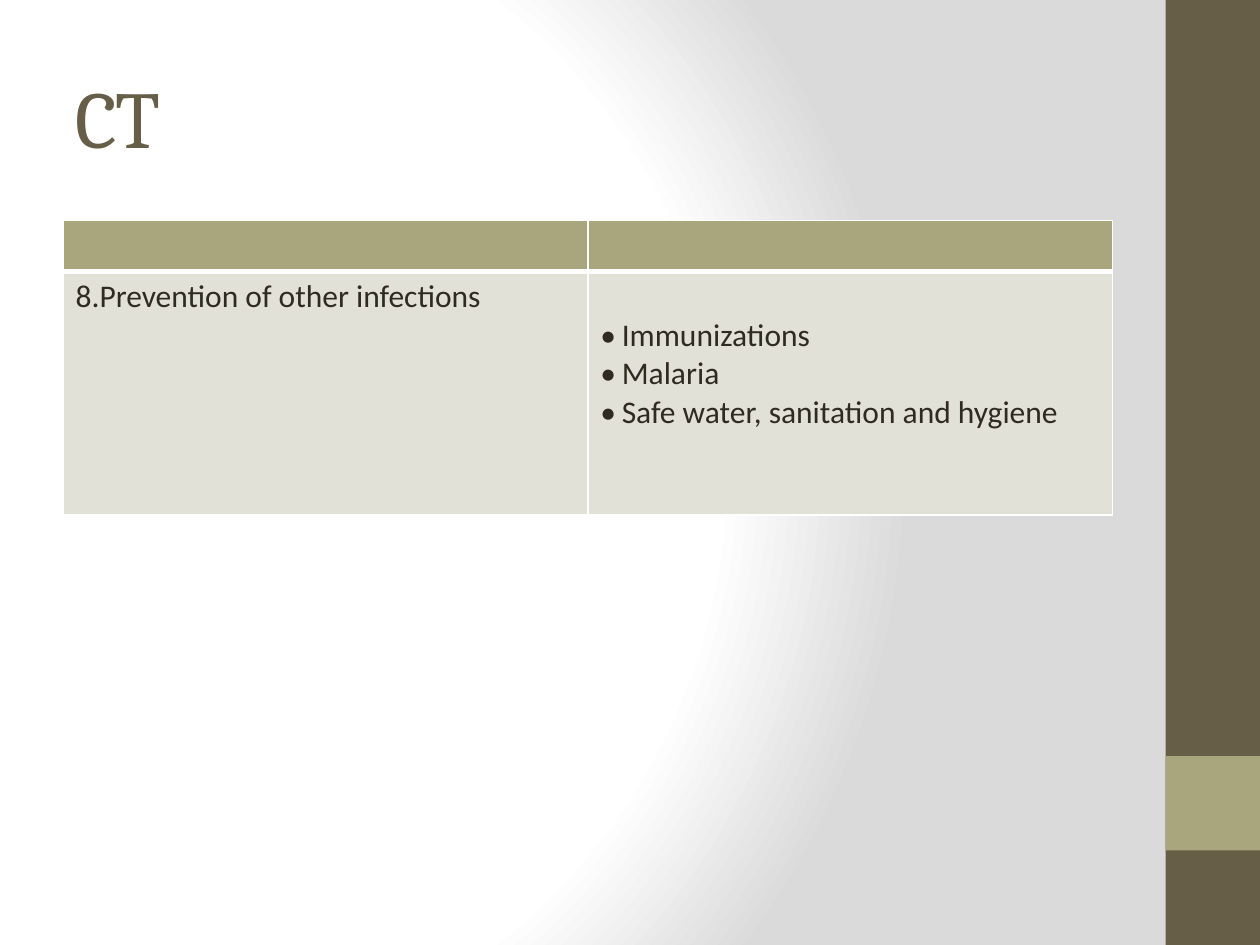
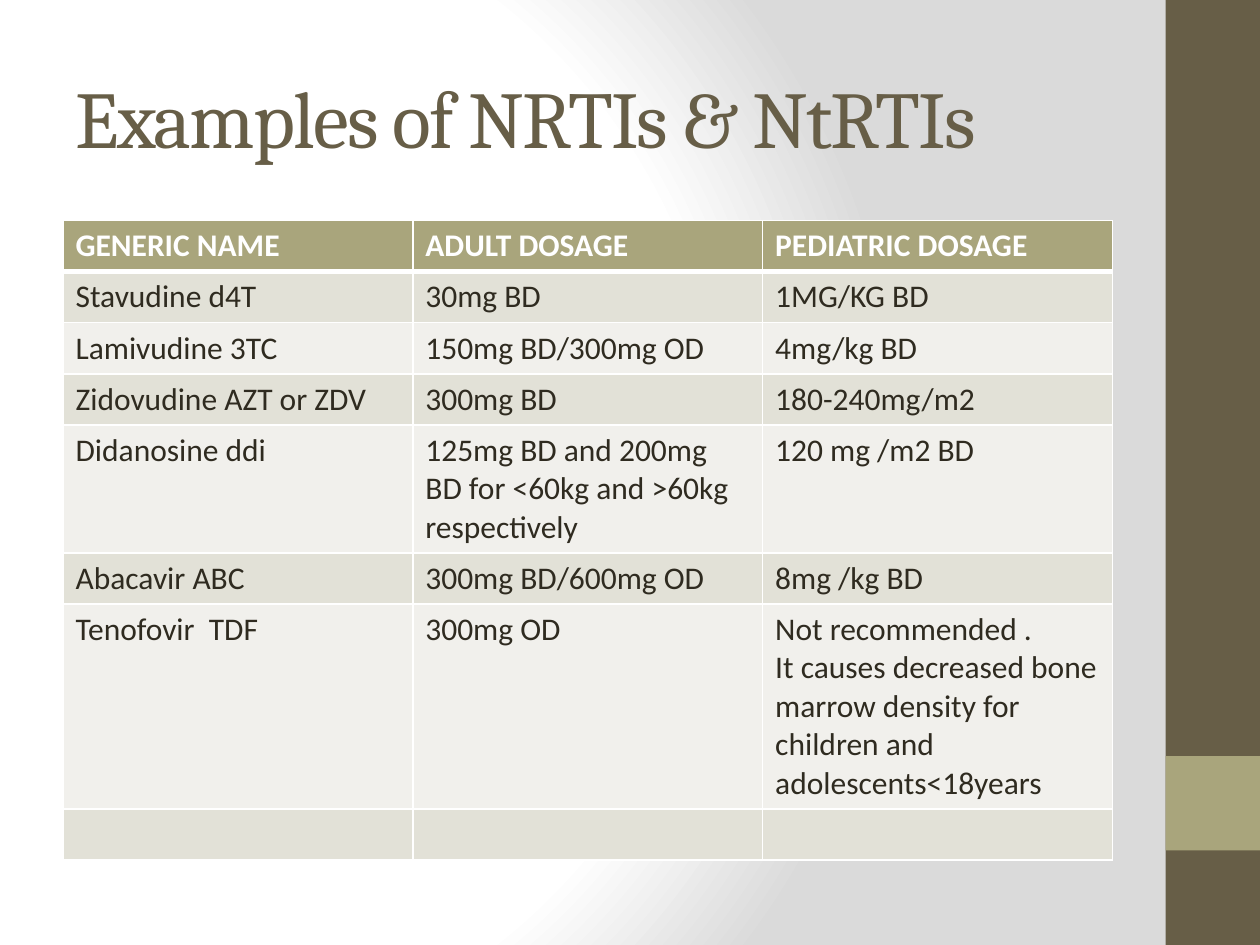
from dataclasses import dataclass
from lxml import etree
from pptx import Presentation, util as u
from pptx.dml.color import RGBColor
from pptx.enum import shapes, text
from pptx.oxml import parse_xml
from pptx.oxml.ns import qn, nsdecls


@dataclass(frozen=True)
class Theme:
    brown: str = "675E47"
    olive: str = "A9A57C"
    ink: str = "2F2B20"
    white: str = "FFFFFF"
    grey: str = "DADADA"
    stripes: tuple = ("E2E1D7", "F1F0EC")
    heading: str = "Cambria"
    body: str = "Calibri"
    title_size: int = 46
    table_size: int = 18
    line: float = 0.305
    inset: float = 0.05
    indent: float = 0.17
    thin: int = 1
    thick: int = 3


THEME = Theme()
WIDTH, HEIGHT = 10, 7.5
BAND = 0.75
TITLE_AREA = (0.5, 0.3, 8.33, 1.25)
TABLE_LEFT, TABLE_TOP, TABLE_WIDTH = 0.5, 1.75, 8.33

# Each row is its height in text lines, then its cells.
PAGES = [
    {
        "title": "CT",
        "rows": [
            (1, ["", ""]),
            (6, ["8.Prevention of other infections",
                 {"skip": 1, "bullets": ["Immunizations", "Malaria",
                                         "Safe water, sanitation and hygiene"]}]),
        ],
    },
    {
        "title": "Examples of NRTIs & NtRTIs",
        "rows": [
            (1, ["GENERIC NAME", "ADULT DOSAGE", "PEDIATRIC DOSAGE"]),
            (1, ["Stavudine d4T", "30mg BD", "1MG/KG BD"]),
            (1, ["Lamivudine 3TC", "150mg BD/300mg OD", "4mg/kg BD"]),
            (1, ["Zidovudine AZT or ZDV", "300mg BD", "180-240mg/m2"]),
            (3, ["Didanosine ddi",
                 "125mg BD and 200mg BD for <60kg and >60kg respectively",
                 "120 mg /m2 BD"]),
            (1, ["Abacavir ABC", "300mg BD/600mg OD", "8mg /kg BD"]),
            (5, ["Tenofovir  TDF", "300mg OD",
                 "Not recommended .\nIt causes decreased bone marrow density "
                 "for children and adolescents<18years"]),
            (1, ["", "", ""]),
        ],
    },
]


def format_font(font, color, **values):
    font.color.rgb = RGBColor.from_string(color)
    for name, value in values.items():
        setattr(font, name, value)


def paint(item, color):
    item.fill.solid()
    item.fill.fore_color.rgb = RGBColor.from_string(color)


def set_background(master):
    master.background.fill.gradient()
    old = next(master.element.iter(qn("a:gradFill")))
    stops = "".join(
        f'<a:gs pos="{share * 1000}"><a:srgbClr val="{color}"/></a:gs>'
        for share, color in ((0, THEME.white), (75, THEME.white), (100, THEME.grey)))
    glow = parse_xml(
        f'<a:gradFill {nsdecls("a")} rotWithShape="1"><a:gsLst>{stops}</a:gsLst>'
        '<a:path path="circle"><a:fillToRect l="20000" t="50000" r="100000" b="50000"/>'
        '</a:path></a:gradFill>')
    old.getparent().replace(old, glow)


def add_bands(page, master):
    tree = master.shapes.element
    bands = ((0, HEIGHT, THEME.brown), (HEIGHT - 2 * BAND, BAND, THEME.olive))
    for place, (top, height, color) in enumerate(bands):
        band = page.shapes.add_shape(
            shapes.MSO_SHAPE.RECTANGLE,
            *map(u.Inches, (WIDTH - BAND, top, BAND, height)))
        paint(band, color)
        band.line.fill.background()
        band.shadow.inherit = False
        band.name = f"Side band {place + 1}"
        tree.insert(2 + place, band.element)


def add_title(page, wording):
    title = page.shapes.title
    for name, value in zip(("left", "top", "width", "height"), TITLE_AREA):
        setattr(title, name, u.Inches(value))
    frame = title.text_frame
    frame.word_wrap = True
    frame.vertical_anchor = text.MSO_ANCHOR.MIDDLE
    para = frame.paragraphs[0]
    para.alignment = text.PP_ALIGN.LEFT
    span = para.add_run()
    span.text = wording
    format_font(span.font, THEME.brown, name=THEME.heading,
                size=u.Pt(THEME.title_size))
    span.font._element.set("spc", "-100")


def add_bullet(para):
    props = para._p.get_or_add_pPr()
    indent = u.Inches(THEME.indent)
    props.set("marL", str(indent))
    props.set("indent", str(-indent))
    etree.SubElement(props, qn("a:buFont")).set("typeface", THEME.body)
    etree.SubElement(props, qn("a:buChar")).set("char", "•")


def fill_cell(cell, content, header):
    bulleted = isinstance(content, dict)
    lines = content["bullets"] if bulleted else content.split("\n")
    if bulleted:
        cell.margin_top = u.Inches(THEME.inset + content["skip"] * THEME.line)
    frame = cell.text_frame
    for number, wording in enumerate(lines):
        para = frame.add_paragraph() if number else frame.paragraphs[0]
        if bulleted:
            add_bullet(para)
        if wording:
            span = para.add_run()
            span.text = wording
            format_font(span.font, THEME.white if header else THEME.ink,
                        name=THEME.body, size=u.Pt(THEME.table_size), bold=header)


def add_borders(cell, row):
    widths = {"lnL": THEME.thin, "lnR": THEME.thin,
              "lnT": THEME.thick if row == 1 else THEME.thin,
              "lnB": THEME.thick if row == 0 else THEME.thin}
    props = cell._tc.get_or_add_tcPr()
    for place, (side, width) in enumerate(widths.items()):
        props.insert(place, parse_xml(
            f'<a:{side} {nsdecls("a")} w="{u.Pt(width)}"><a:solidFill>'
            f'<a:srgbClr val="{THEME.white}"/></a:solidFill></a:{side}>'))


def add_grid(page, rows):
    heights = [lines * THEME.line + 2 * THEME.inset for lines, _ in rows]
    area = (TABLE_LEFT, TABLE_TOP, TABLE_WIDTH, sum(heights))
    table = page.shapes.add_table(
        len(rows), len(rows[0][1]), *map(u.Inches, area)).table
    for row, (height, (_, contents)) in enumerate(zip(heights, rows)):
        table.rows[row].height = u.Inches(height)
        for column, content in enumerate(contents):
            cell = table.cell(row, column)
            paint(cell, THEME.stripes[(row - 1) % 2] if row else THEME.olive)
            add_borders(cell, row)
            fill_cell(cell, content, header=row == 0)


def main():
    deck = Presentation()
    deck.slide_width, deck.slide_height = u.Inches(WIDTH), u.Inches(HEIGHT)
    master = deck.slide_master
    set_background(master)
    layout = deck.slide_layouts.get_by_name("Title Only")
    for number, content in enumerate(PAGES):
        page = deck.slides.add_slide(layout)
        if number == 0:
            add_bands(page, master)
        add_title(page, content["title"])
        add_grid(page, content["rows"])
    deck.save("out.pptx")


if __name__ == "__main__":
    main()
